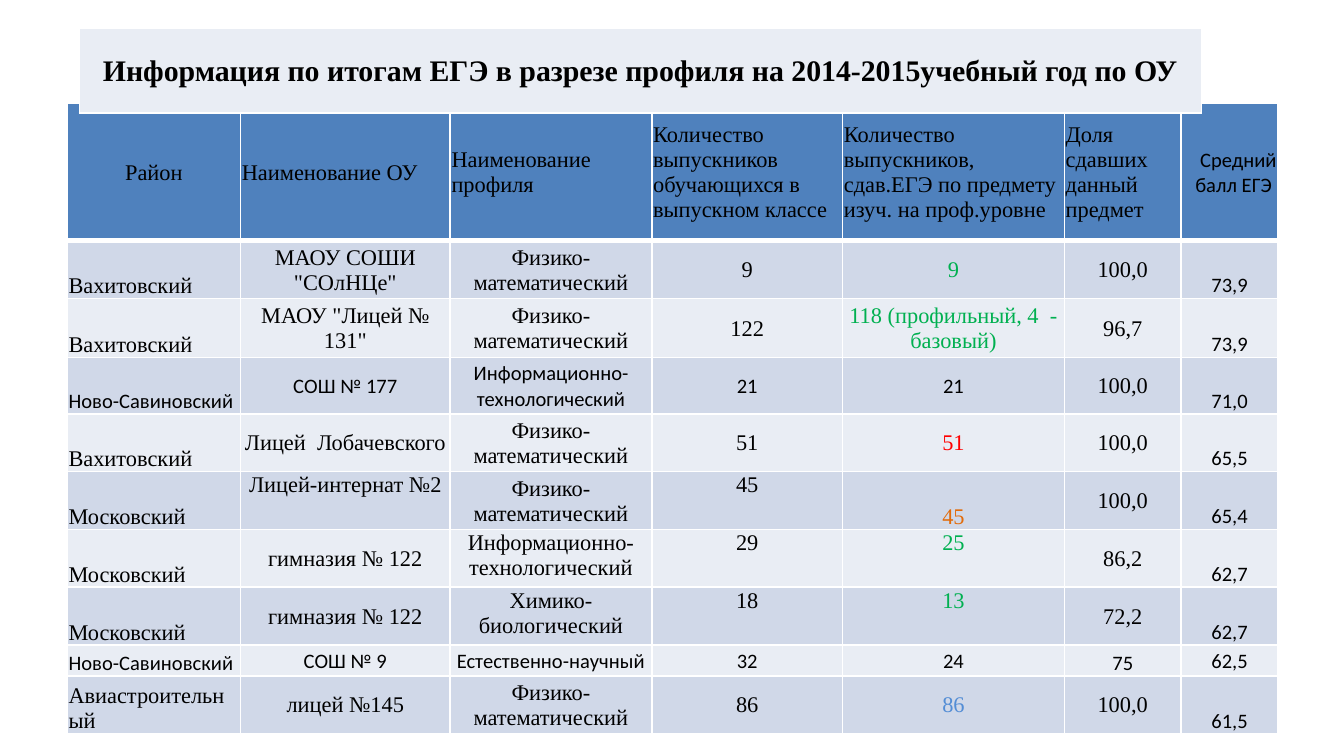
from dataclasses import dataclass

from lxml import etree
from pptx import Presentation
from pptx.dml.color import RGBColor
from pptx.enum.text import MSO_ANCHOR, PP_ALIGN
from pptx.oxml.ns import qn
from pptx.util import Inches, Pt

LEFT, CENTER, RIGHT = PP_ALIGN.LEFT, PP_ALIGN.CENTER, PP_ALIGN.RIGHT
TOP, MIDDLE, BOTTOM = MSO_ANCHOR.TOP, MSO_ANCHOR.MIDDLE, MSO_ANCHOR.BOTTOM


@dataclass(frozen=True)
class Theme:
    serif: tuple = ("Times New Roman", 12)
    sans: tuple = ("Calibri", 11)
    title: tuple = ("Times New Roman", 16)
    text: str = "000000"
    border: str = "FFFFFF"
    header: str = "4F81BD"
    bands: tuple = ("D0D8E8", "E9EDF4")
    green: str = "00B050"
    red: str = "FF0000"
    orange: str = "E26B0A"
    blue: str = "538DD5"
    line: int = 1
    header_line: int = 3


THEME = Theme()

TITLE = "Информация по итогам ЕГЭ в разрезе профиля на 2014-2015учебный год по ОУ"
COLUMNS = [1.29, 1.56, 1.5, 1.42, 1.65, 0.87, 0.72]
HEIGHTS = [1.02, 0.43, 0.44, 0.42, 0.43, 0.43, 0.43, 0.43, 0.23, 0.43]
HEADER = ["Район", "Наименование ОУ", "Наименование профиля",
          "Количество выпускников обучающихся в выпускном классе",
          "Количество выпускников, сдав.ЕГЭ по предмету изуч. на проф.уровне",
          "Доля сдавших данный предмет", "Средний балл ЕГЭ "]
PHYSICS = "Физико-математический"
IT = "Информационно-технологический"
RESULTS = [
    ["Вахитовский", 'МАОУ СОШИ "СОлНЦе"', PHYSICS, "9", "9", "100,0", "73,9"],
    ["Вахитовский", 'МАОУ "Лицей № 131"', PHYSICS, "122",
     "118 (профильный, 4  - базовый)", "96,7", "73,9"],
    ["Ново-Савиновский", "СОШ № 177", IT, "21", "21", "100,0", "71,0"],
    ["Вахитовский", "Лицей  Лобачевского", PHYSICS, "51", "51", "100,0", "65,5"],
    ["Московский", "Лицей-интернат №2", PHYSICS, "45", "45", "100,0", "65,4"],
    ["Московский", "гимназия № 122", IT, "29", "25", "86,2", "62,7"],
    ["Московский", "гимназия № 122", "Химико-биологический", "18", "13", "72,2", "62,7"],
    ["Ново-Савиновский", "СОШ № 9", "Естественно-научный", "32", "24", "75", "62,5"],
    ["Авиастроительный", "лицей №145", PHYSICS, "86", "86", "100,0", "61,5"],
]
PASSED_COLORS = [THEME.green, THEME.green, THEME.text, THEME.red, THEME.orange,
                 THEME.green, THEME.green, THEME.text, THEME.blue]
HEADER_ALIGN = [CENTER] + [LEFT] * 5 + [RIGHT]
BODY_ALIGN = [LEFT] + [CENTER] * 6
ANCHORS = {"t": TOP, "m": MIDDLE, "b": BOTTOM}
BODY_ANCHORS = ["bmmmmmb"] * 4 + ["btmtbmb", "bmtttmb", "bmtttmb", "bmmmmbm", "bmmmmmb"]
PASSED, SHARE, SCORE = 4, 5, 6
SANS_CELLS = {(r, c) for r in (2, 7) for c in range(SCORE)} - {(2, SHARE)}


class SlideBuilder:
    def __init__(self, prs, theme):
        self.theme = theme
        self.slide = prs.slides.add_slide(prs.slide_layouts[6])

    def table(self, left, top, columns, heights):
        table = self.slide.shapes.add_table(
            len(heights), len(columns), Inches(left), Inches(top),
            Inches(sum(columns)), Inches(sum(heights))).table
        table.first_row = table.horz_banding = False
        for column, width in zip(table.columns, columns):
            column.width = Inches(width)
        for row, height in zip(table.rows, heights):
            row.height = Inches(height)
        return table

    def borders(self, cell, top, bottom):
        tc_pr = cell._tc.get_or_add_tcPr()
        line = self.theme.line
        for side, width in (("L", line), ("R", line), ("T", top), ("B", bottom)):
            ln = etree.SubElement(tc_pr, qn(f"a:ln{side}"), w=str(Pt(width)))
            fill = etree.SubElement(ln, qn("a:solidFill"))
            etree.SubElement(fill, qn("a:srgbClr"), val=self.theme.border)

    def cell(self, cell, text, fill, font, color, align, anchor=MIDDLE,
             top=THEME.line, bottom=THEME.line, bold=False):
        self.borders(cell, top, bottom)
        cell.fill.solid()
        cell.fill.fore_color.rgb = RGBColor.from_string(fill)
        cell.text = text
        cell.vertical_anchor = anchor
        cell.margin_left = cell.margin_top = cell.margin_right = Inches(0.01)
        cell.margin_bottom = 0
        p = cell.text_frame.paragraphs[0]
        p.alignment = align
        p.font.name, size = font
        p.font.size = Pt(size)
        p.font.bold = bold
        p.font.color.rgb = RGBColor.from_string(color)


def main():
    prs = Presentation()
    prs.slide_width = Inches(10)
    prs.slide_height = prs.slide_width * 9 // 16
    s = SlideBuilder(prs, THEME)
    table = s.table(0.5, 0.77, COLUMNS, HEIGHTS)

    for c, text in enumerate(HEADER):
        font = THEME.sans if c == SCORE else THEME.serif
        s.cell(table.cell(0, c), text, THEME.header, font, THEME.text,
               HEADER_ALIGN[c], bottom=THEME.header_line)

    for r, row in enumerate(RESULTS):
        top = THEME.header_line if r == 0 else THEME.line
        for c, text in enumerate(row):
            font = THEME.sans if c == SCORE or (r, c) in SANS_CELLS else THEME.serif
            color = PASSED_COLORS[r] if c == PASSED else THEME.text
            s.cell(table.cell(r + 1, c), text, THEME.bands[r % 2], font, color,
                   BODY_ALIGN[c], ANCHORS[BODY_ANCHORS[r][c]], top)

    title = s.table(0.59, 0.21, [8.35], [0.63])
    s.cell(title.cell(0, 0), TITLE, THEME.bands[1], THEME.title, THEME.text,
           CENTER, bold=True)

    prs.save("out.pptx")


if __name__ == "__main__":
    main()
